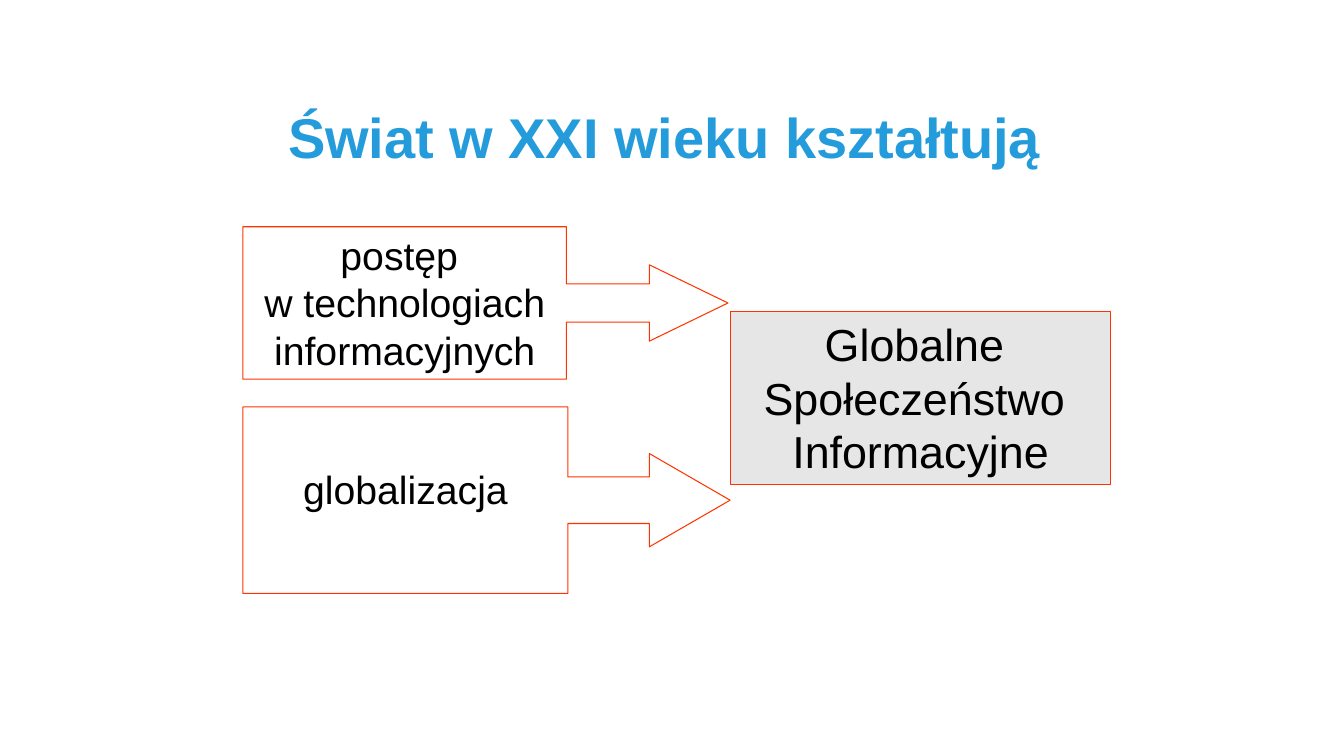
from dataclasses import dataclass

from pptx import Presentation
from pptx.dml.color import RGBColor
from pptx.enum import shapes, text
from pptx.util import Pt

TITLE = "Świat w XXI wieku kształtują "
# text, top, width, height, top inset, arrowhead length as a share of the height
CAUSES = [
    ("postęp \vw technologiach informacyjnych", 162, 346.5, 108.9, 3.6, 0.515),
    ("globalizacja", 290.7, 348, 133.2, 42, 0.433),
]
RESULT = ["Globalne ", "Społeczeństwo ", "Informacyjne"]


@dataclass(frozen=True)
class Theme:
    font: str = "Arial"
    title: RGBColor = RGBColor(0x24, 0x9C, 0xDC)
    ink: RGBColor = RGBColor(0, 0, 0)
    line: RGBColor = RGBColor(0xFF, 0x33, 0)
    panel: RGBColor = RGBColor(0xE7, 0xE6, 0xE6)
    title_size: int = 40
    cause_size: int = 28
    result_size: int = 32


THEME = Theme()
CAUSE_LEFT = 173.5
SHAFT, HEAD, BOX_SHARE = 0.25, 0.25, 0.667


def format_text(tf, size, color):
    for p in tf.paragraphs:
        p.alignment = text.PP_ALIGN.CENTER
        p.font.name = THEME.font
        p.font.size = Pt(size)
        p.font.color.rgb = color


def add_box(s, kind, box, lines, size, fill=None):
    sp = s.shapes.add_shape(kind, *map(Pt, box))
    sp.shadow.inherit = False
    if fill is None:
        sp.fill.background()
    else:
        sp.fill.solid()
        sp.fill.fore_color.rgb = fill
    sp.line.color.rgb = THEME.line
    sp.line.width = Pt(0.75)
    tf = sp.text_frame
    tf.word_wrap = True
    tf.vertical_anchor = text.MSO_ANCHOR.TOP
    tf.text = "\n".join(lines)
    format_text(tf, size, THEME.ink)
    return sp


def main():
    prs = Presentation()
    prs.slide_width, prs.slide_height = Pt(960), Pt(540)
    s = prs.slides.add_slide(prs.slide_layouts[5])

    title = s.shapes.title
    title.left, title.top, title.width, title.height = map(Pt, (66, 48, 828, 104.4))
    tf = title.text_frame
    tf.text = TITLE
    tf.vertical_anchor = text.MSO_ANCHOR.MIDDLE
    format_text(tf, THEME.title_size, THEME.title)
    tf.paragraphs[0].font.bold = True
    tf.paragraphs[0].line_spacing = 0.9

    for words, top, width, height, inset, head_length in CAUSES:
        sp = add_box(s, shapes.MSO_SHAPE.RIGHT_ARROW_CALLOUT,
                     (CAUSE_LEFT, top, width, height), [words], THEME.cause_size)
        for i, value in enumerate((SHAFT, HEAD, head_length, BOX_SHARE)):
            sp.adjustments[i] = value
        sp.text_frame.margin_top = Pt(inset)

    add_box(s, shapes.MSO_SHAPE.RECTANGLE, (522, 222.5, 271.4, 123.8),
            RESULT, THEME.result_size, THEME.panel)

    prs.save("out.pptx")


if __name__ == "__main__":
    main()
